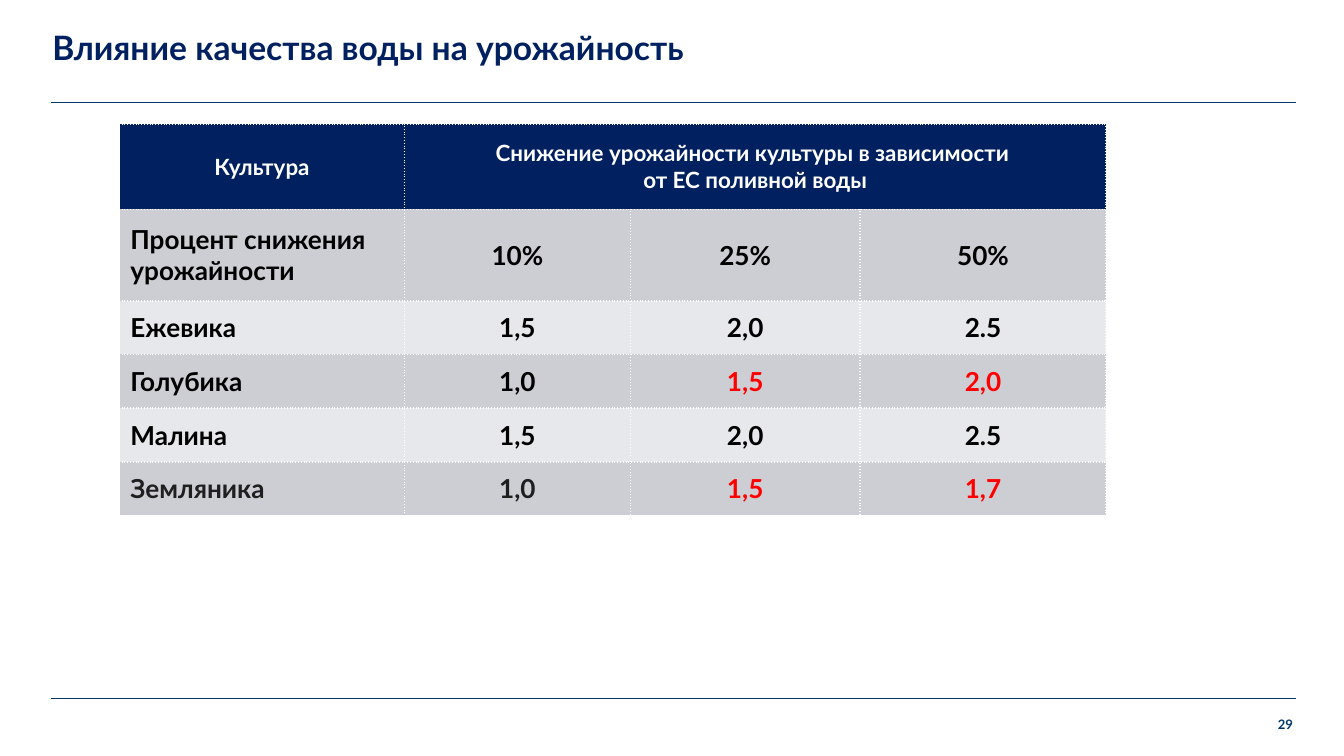
from dataclasses import dataclass

from lxml.etree import SubElement
from pptx import Presentation
from pptx.dml.color import RGBColor
from pptx.enum.shapes import MSO_CONNECTOR
from pptx.enum.text import MSO_ANCHOR, PP_ALIGN
from pptx.oxml.ns import qn
from pptx.util import Inches, Pt

# Widescreen, 16:9
SLIDE_WIDTH = Inches(10)
SLIDE_HEIGHT = SLIDE_WIDTH * 9 // 16


@dataclass(frozen=True)
class Theme:
    font: str = "Lato"
    navy: str = "002060"
    rule: str = "053868"
    white: str = "FFFFFF"
    black: str = "000000"
    soft_black: str = "1F1F1F"
    warning: str = "FF0000"
    bands: tuple = ("CCCED4", "E7E8EB")
    title_size: int = 18
    header_size: int = 12
    body_size: int = 14
    number_size: int = 7


THEME = Theme()

# Table content
HEADER = ["Культура", "Снижение урожайности культуры в зависимости \nот EC поливной воды"]
YIELD_LOSS = [
    ["Процент снижения урожайности", "10%", "25%", "50%"],
    ["Ежевика", "1,5", "2,0", "2.5"],
    ["Голубика", "1,0", "1,5", "2,0"],
    ["Малина", "1,5", "2,0", "2.5"],
    ["Земляника", "1,0", "1,5", "1,7"],
]
SENSITIVE_CROPS = {"Голубика", "Земляника"}

# Table grid, in percent of the slide's width and height
COLUMN_SHARES = [21.2, 16.8, 17.1, 18.3]
ROW_SHARES = [11.3, 12.1] + [7.1] * 4


def across(percent):
    return int(SLIDE_WIDTH * percent / 100)


def down(percent):
    return int(SLIDE_HEIGHT * percent / 100)


def write(frame, text, size, color, align=PP_ALIGN.LEFT):
    frame.word_wrap = True
    frame.text = text
    for paragraph in frame.paragraphs:
        paragraph.alignment = align
        paragraph.font.name = THEME.font
        paragraph.font.size = Pt(size)
        paragraph.font.bold = True
        paragraph.font.color.rgb = RGBColor.from_string(color)


def add_label(slide, left, top, width, height, text, size, color, align=PP_ALIGN.LEFT):
    label = slide.shapes.add_textbox(across(left), down(top), across(width), down(height))
    frame = label.text_frame
    frame.margin_left = frame.margin_top = frame.margin_right = frame.margin_bottom = 0
    write(frame, text, size, color, align)


def add_rule(slide, top):
    rule = slide.shapes.add_connector(
        MSO_CONNECTOR.STRAIGHT, across(3.8), down(top), across(96.4), down(top))
    rule.line.color.rgb = RGBColor.from_string(THEME.rule)
    rule.line.width = Pt(0.25)
    SubElement(rule._element.spPr, qn("a:effectLst"))


def add_dotted_borders(cell):
    properties = cell._tc.get_or_add_tcPr()
    for side in ("lnL", "lnR", "lnT", "lnB"):
        border = SubElement(properties, qn(f"a:{side}"), w=str(Pt(1)))
        fill = SubElement(border, qn("a:solidFill"))
        SubElement(fill, qn("a:srgbClr"), val=THEME.white)
        SubElement(border, qn("a:prstDash"), val="sysDot")


def style_cell(cell, fill):
    # Borders come before the fill in the cell's properties
    add_dotted_borders(cell)
    cell.fill.solid()
    cell.fill.fore_color.rgb = RGBColor.from_string(fill)
    cell.vertical_anchor = MSO_ANCHOR.MIDDLE
    cell.margin_left = cell.margin_right = Inches(0.08)
    cell.margin_top = cell.margin_bottom = Inches(0.08)


def value_color(crop, column):
    if crop in SENSITIVE_CROPS and column >= 2:
        return THEME.warning
    return THEME.soft_black if crop == "Земляника" else THEME.black


def add_yield_table(slide):
    table = slide.shapes.add_table(
        len(ROW_SHARES), len(COLUMN_SHARES), across(8.9), down(16.4),
        across(sum(COLUMN_SHARES)), down(sum(ROW_SHARES))).table
    for column, share in zip(table.columns, COLUMN_SHARES):
        column.width = across(share)
    for row, share in zip(table.rows, ROW_SHARES):
        row.height = down(share)

    # Header row
    table.cell(0, 1).merge(table.cell(0, 3))
    for cell in table.rows[0].cells:
        style_cell(cell, THEME.navy)
    for column, heading in enumerate(HEADER):
        write(table.cell(0, column).text_frame, heading,
              THEME.header_size, THEME.white, PP_ALIGN.CENTER)

    # Banded rows
    for index, values in enumerate(YIELD_LOSS):
        for column, value in enumerate(values):
            cell = table.cell(index + 1, column)
            style_cell(cell, THEME.bands[index % 2])
            write(cell.text_frame, value, THEME.body_size, value_color(values[0], column),
                  PP_ALIGN.CENTER if column else PP_ALIGN.LEFT)


def main():
    presentation = Presentation()
    presentation.slide_width, presentation.slide_height = SLIDE_WIDTH, SLIDE_HEIGHT
    slide = presentation.slides.add_slide(presentation.slide_layouts[6])

    # Frame: rules, title and page number
    for top in (13.5, 92.3):
        add_rule(slide, top)
    add_label(slide, 3.9, 3.5, 92.5, 11, "Влияние качества воды на урожайность",
              THEME.title_size, THEME.navy)
    add_label(slide, 94.8, 94.8, 1.4, 2.5, "29",
              THEME.number_size, THEME.rule, PP_ALIGN.RIGHT)

    add_yield_table(slide)
    presentation.save("out.pptx")


if __name__ == "__main__":
    main()
